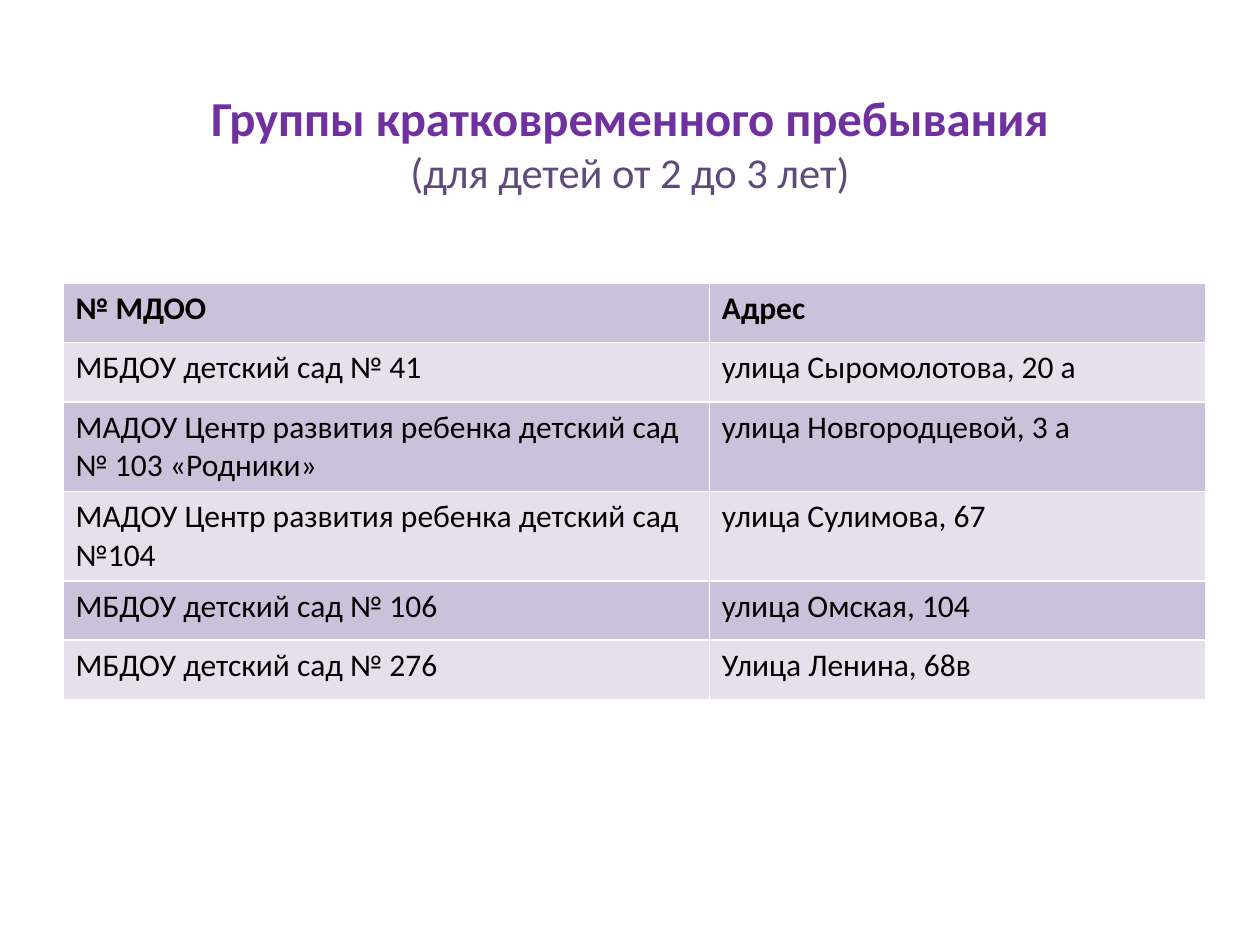
"""Build a slide listing short-stay kindergarten groups and their addresses."""
from pptx import Presentation
from pptx.dml.color import RGBColor
from pptx.enum.text import MSO_ANCHOR, PP_ALIGN
from pptx.util import Inches, Pt

MIDDLE, CENTER = MSO_ANCHOR.MIDDLE, PP_ALIGN.CENTER

THEME = {
    "font": "Calibri",
    "title": (27.9, "7030A0"),
    "note": (24.3, "604A7B"),
    "cell": (18, "000000"),
    "bands": ("CCC1DA", "E6E0EC"),
}

TITLE = [
    ("Группы кратковременного пребывания", "title", True),
    ("(для детей от 2 до 3 лет)", "note", False),
]
ROWS = [
    ("№ МДОО", "Адрес"),
    ("МБДОУ детский сад № 41", "улица Сыромолотова, 20 а"),
    ("МАДОУ Центр развития ребенка детский сад № 103 «Родники»",
     "улица Новгородцевой, 3 а"),
    ("МАДОУ Центр развития ребенка детский сад №104", "улица Сулимова, 67"),
    ("МБДОУ детский сад № 106", "улица Омская, 104"),
    ("МБДОУ детский сад № 276", "Улица Ленина, 68в"),
]
WIDTHS = (5.13, 3.94)
ROW_H = 0.47


def style(para, role, bold):
    size, color = THEME[role]
    font = para.font
    font.name, font.size, font.bold = THEME["font"], Pt(size), bold
    font.color.rgb = RGBColor.from_string(color)


def add_title(slide):
    title = slide.shapes.title
    title.left, title.top = Inches(0.5), Inches(0.3)
    title.width, title.height = Inches(9), Inches(1.25)
    frame = title.text_frame
    frame.vertical_anchor = MIDDLE
    frame.margin_top = Inches(0.46)
    frame.text = "\n".join(text for text, _, _ in TITLE)
    for para, (_, role, bold) in zip(frame.paragraphs, TITLE):
        para.alignment = CENTER
        para.space_before = Pt(0)
        style(para, role, bold)


def add_table(slide):
    table = slide.shapes.add_table(
        len(ROWS), len(WIDTHS), Inches(0.5), Inches(2.25),
        Inches(sum(WIDTHS)), Inches(ROW_H * len(ROWS))).table
    for col, width in zip(table.columns, WIDTHS):
        col.width = Inches(width)
    for i, row in enumerate(ROWS):
        for j, text in enumerate(row):
            cell = table.cell(i, j)
            cell.text = text
            cell.fill.solid()
            cell.fill.fore_color.rgb = RGBColor.from_string(THEME["bands"][i % 2])
            style(cell.text_frame.paragraphs[0], "cell", i == 0)


def main():
    deck = Presentation()
    deck.slide_width, deck.slide_height = Inches(10), Inches(7.5)
    slide = deck.slides.add_slide(deck.slide_layouts.get_by_name("Title Only"))
    add_title(slide)
    add_table(slide)
    deck.save("out.pptx")


if __name__ == "__main__":
    main()
